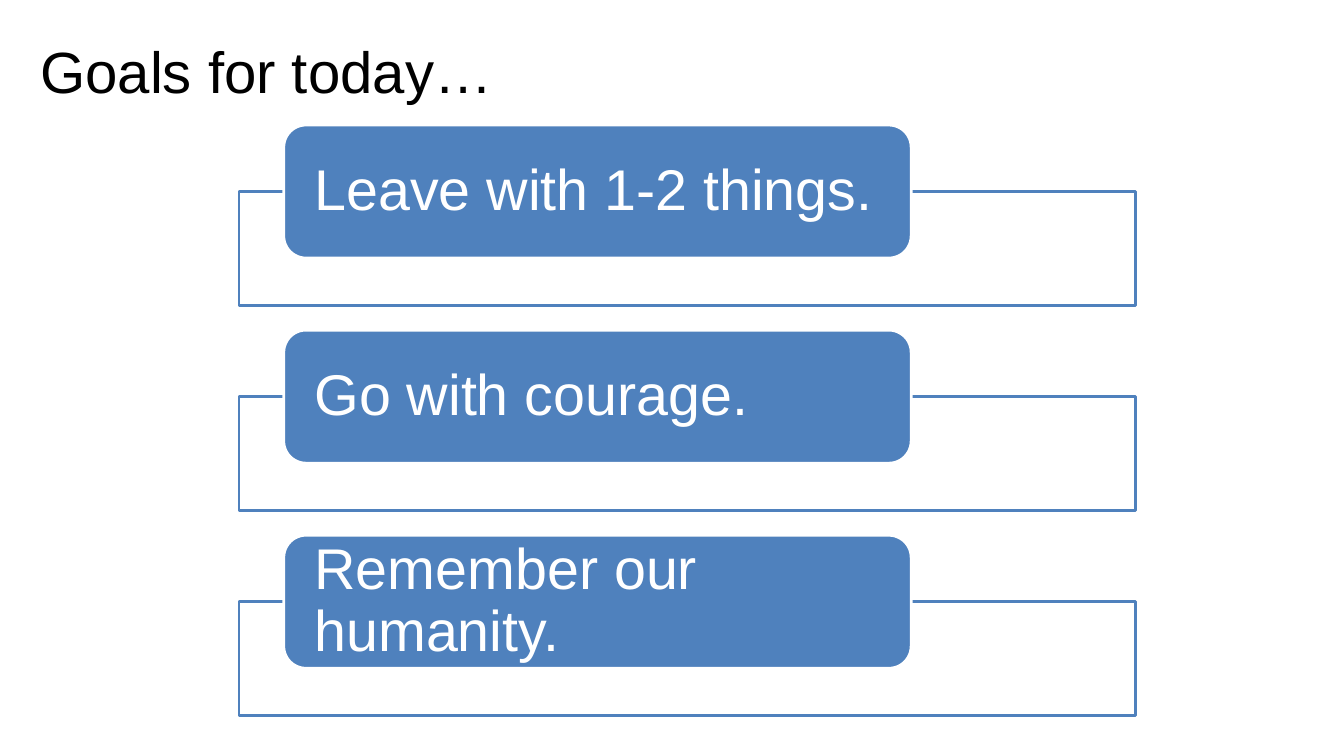
"""Builds a slide listing the goals for today as three labelled frames."""
from dataclasses import dataclass

from pptx import Presentation
from pptx.dml.color import RGBColor
from pptx.enum.shapes import MSO_SHAPE
from pptx.enum.text import MSO_ANCHOR, PP_ALIGN
from pptx.util import Inches, Pt

RECTANGLE = MSO_SHAPE.RECTANGLE
ROUNDED = MSO_SHAPE.ROUNDED_RECTANGLE
MIDDLE = MSO_ANCHOR.MIDDLE
LEFT = PP_ALIGN.LEFT

TITLE = "Goals for today…"
GOALS = ["Leave with 1-2 things.", "Go with courage.", "Remember our humanity."]

SLIDE_WIDTH, SLIDE_HEIGHT = 13.33, 7.5
TITLE_HEIGHT = 1.4
TITLE_INSETS = (0.4, 0.1, 0.3, 0.1)
LABEL_INSETS = (0.24, 0, 0.24, 0)
FRAME_LEFT, FRAME_WIDTH, FRAME_HEIGHT = 2.37, 8.89, 1.13
FIRST_FRAME_TOP, LAST_FRAME_TOP = 1.9, 5.97
ROW_PITCH = (LAST_FRAME_TOP - FIRST_FRAME_TOP) / (len(GOALS) - 1)
LABEL_LEFT = FRAME_LEFT + FRAME_WIDTH * 0.05
LABEL_WIDTH = FRAME_WIDTH * 0.7
LABEL_HEIGHT = 1.32


@dataclass(frozen=True)
class Theme:
    font: str = "Arial"
    black: RGBColor = RGBColor(0, 0, 0)
    white: RGBColor = RGBColor(255, 255, 255)
    blue: RGBColor = RGBColor(0x4F, 0x81, 0xBD)
    title_size: float = 41.5
    label_size: float = 41
    line_width: float = 2


THEME = Theme()


def write_text(box, text, size, color, insets, line_spacing=1.0):
    frame = box.text_frame
    frame.word_wrap = True
    frame.vertical_anchor = MIDDLE
    (frame.margin_left, frame.margin_top,
     frame.margin_right, frame.margin_bottom) = map(Inches, insets)
    para = frame.paragraphs[0]
    para.alignment = LEFT
    para.line_spacing = line_spacing
    span = para.add_run()
    span.text = text
    span.font.name = THEME.font
    span.font.size = Pt(size)
    span.font.color.rgb = color


def add_panel(page, kind, bounds, fill, line):
    panel = page.shapes.add_shape(kind, *map(Inches, bounds))
    panel.shadow.inherit = False
    panel.fill.solid()
    panel.fill.fore_color.rgb = fill
    panel.line.color.rgb = line
    panel.line.width = Pt(THEME.line_width)
    return panel


def add_goal(page, goal, frame_top):
    add_panel(page, RECTANGLE, (FRAME_LEFT, frame_top, FRAME_WIDTH, FRAME_HEIGHT),
              THEME.white, THEME.blue)
    label_top = frame_top - LABEL_HEIGHT / 2
    label = add_panel(page, ROUNDED, (LABEL_LEFT, label_top, LABEL_WIDTH, LABEL_HEIGHT),
                      THEME.blue, THEME.white)
    write_text(label, goal, THEME.label_size, THEME.white, LABEL_INSETS, 0.9)


def main():
    deck = Presentation()
    deck.slide_width, deck.slide_height = Inches(SLIDE_WIDTH), Inches(SLIDE_HEIGHT)
    page = deck.slides.add_slide(deck.slide_layouts[6])
    title = page.shapes.add_textbox(0, 0, deck.slide_width, Inches(TITLE_HEIGHT))
    write_text(title, TITLE, THEME.title_size, THEME.black, TITLE_INSETS)
    for row, goal in enumerate(GOALS):
        add_goal(page, goal, FIRST_FRAME_TOP + row * ROW_PITCH)
    deck.save("out.pptx")


if __name__ == "__main__":
    main()
